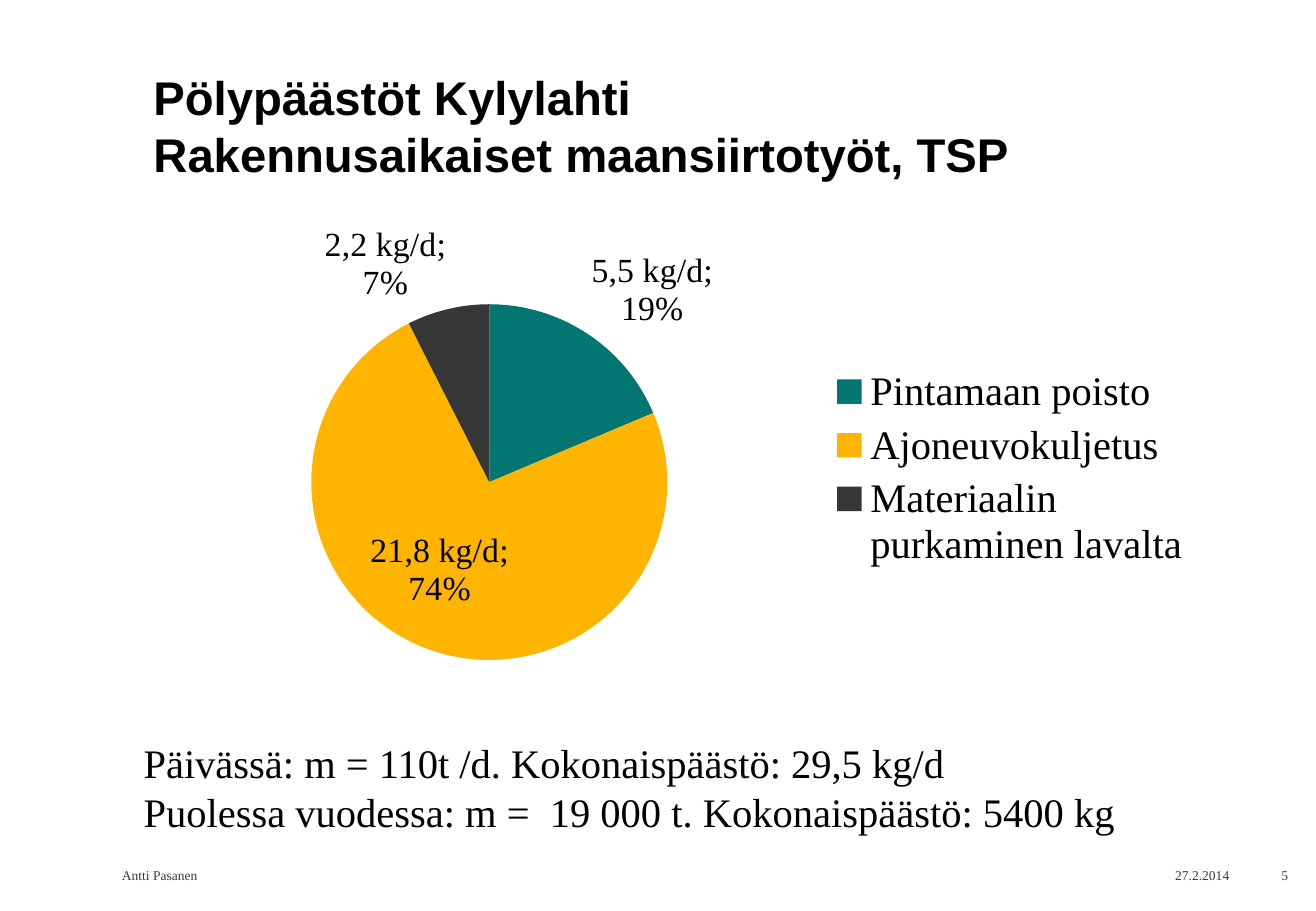
from lxml import etree
from pptx import Presentation
from pptx.chart.data import CategoryChartData
from pptx.dml.color import RGBColor
from pptx.enum.chart import XL_CHART_TYPE as ChartType
from pptx.enum.chart import XL_LABEL_POSITION as LabelPos
from pptx.enum.chart import XL_LEGEND_POSITION as LegendPos
from pptx.enum.text import MSO_ANCHOR as Anchor
from pptx.enum.text import PP_ALIGN as Align
from pptx.oxml.ns import qn
from pptx.util import Inches, Pt

BLACK = RGBColor(0x00, 0x00, 0x00)
FOOTER_GREY = RGBColor(0x3D, 0x39, 0x38)
TEAL = RGBColor(0x03, 0x76, 0x72)
AMBER = RGBColor(0xFF, 0xB4, 0x00)
CHARCOAL = RGBColor(0x36, 0x36, 0x36)
SANS, SERIF = "Arial", "Times New Roman"


class SlideBuilder:
    """Places styled elements on a grid of 100 columns by 100 rows."""

    def __init__(self, deck):
        self.column, self.row = deck.slide_width / 100, deck.slide_height / 100
        self.slide = deck.slides.add_slide(deck.slide_layouts[6])

    def place(self, left, top, width, height):
        return (round(left * self.column), round(top * self.row),
                round(width * self.column), round(height * self.row))

    def style(self, font, size, color=BLACK, name=SERIF, bold=False):
        font.name, font.size, font.bold = name, Pt(size), bold
        font.color.rgb = color

    def fill_text(self, frame, lines, size, align, **look):
        frame.text = "\n".join(lines)
        for paragraph in frame.paragraphs:
            paragraph.alignment = align
            for run in paragraph.runs:
                self.style(run.font, size, **look)

    def text(self, area, lines, size, anchor=Anchor.TOP, align=Align.LEFT, **look):
        frame = self.slide.shapes.add_textbox(*self.place(*area)).text_frame
        frame.word_wrap = True
        frame.vertical_anchor = anchor
        self.fill_text(frame, lines, size, align, **look)

    def footer(self, left, width, words, align=Align.LEFT):
        self.text((left, 95, width, 2.13), [words], 8, Anchor.MIDDLE, align,
                  color=FOOTER_GREY)

    def fix_layout(self, element, index, x, y, w, h, inner=False):
        for old in element.findall(qn("c:layout")):
            element.remove(old)
        layout = etree.Element(qn("c:layout"))
        manual = etree.SubElement(layout, qn("c:manualLayout"))
        settings = [("layoutTarget", "inner")] if inner else []
        settings += [("xMode", "edge"), ("yMode", "edge"),
                     ("x", x), ("y", y), ("w", w), ("h", h)]
        for tag, value in settings:
            etree.SubElement(manual, qn(f"c:{tag}")).set("val", str(value))
        element.insert(index, layout)

    def pie(self, area, sources):
        total = sum(amount for _, amount, _ in sources)
        emissions = CategoryChartData()
        emissions.categories = [name for name, _, _ in sources]
        emissions.add_series("Series 1", [amount for _, amount, _ in sources])
        chart = self.slide.shapes.add_chart(
            ChartType.PIE, *self.place(*area), emissions).chart
        chart.has_title = False
        self.style(chart.font, 10)
        self.fix_layout(chart.plots[0]._element.getparent(), 0,
                        0.16, 0.2, 0.34, 0.63, inner=True)

        chart.has_legend = True
        legend = chart.legend
        legend.position = LegendPos.RIGHT
        legend.include_in_layout = False
        self.style(legend.font, 24)
        self.fix_layout(legend._element, 1, 0.64, 0.3, 0.36, 0.38)

        series = chart.plots[0].series[0]
        labels = series.data_labels
        labels.show_value = labels.show_percentage = True
        self.style(labels.font, 20)
        for index, (_, amount, color) in enumerate(sources):
            point = series.points[index]
            point.format.fill.solid()
            point.format.fill.fore_color.rgb = color
            point.format.line.fill.background()
            rate = f"{amount} kg/d;".replace(".", ",")
            self.fill_text(point.data_label.text_frame,
                           [rate, f"{amount / total:.0%}"], 20, Align.CENTER)
            point.data_label.position = LabelPos.BEST_FIT
        for percent in labels._element.iter(qn("c:showPercent")):
            percent.set("val", "1")


def main():
    deck = Presentation()
    deck.slide_width, deck.slide_height = Inches(10.83), Inches(7.5)
    page = SlideBuilder(deck)
    page.text((10.75, 2.75, 85.78, 17.87),
              ["Pölypäästöt Kylylahti\vRakennusaikaiset maansiirtotyöt, TSP"],
              28, Anchor.BOTTOM, name=SANS, bold=True)
    page.pie((10.55, 21, 80.7, 62), [
        ("Pintamaan poisto", 5.5, TEAL),
        ("Ajoneuvokuljetus", 21.8, AMBER),
        ("Materiaalin purkaminen lavalta", 2.2, CHARCOAL),
    ])
    page.text((10, 80.4, 82, 12.27), [
        "Päivässä: m = 110t /d. Kokonaispäästö: 29,5 kg/d",
        "Puolessa vuodessa: m =  19 000 t. Kokonaispäästö: 5400 kg",
    ], 24)
    page.footer(8.35, 62.05, "Antti Pasanen")
    page.footer(82.7, 11.63, "27.2.2014", Align.RIGHT)
    page.footer(94.35, 4.43, "5", Align.RIGHT)
    deck.save("out.pptx")


if __name__ == "__main__":
    main()
